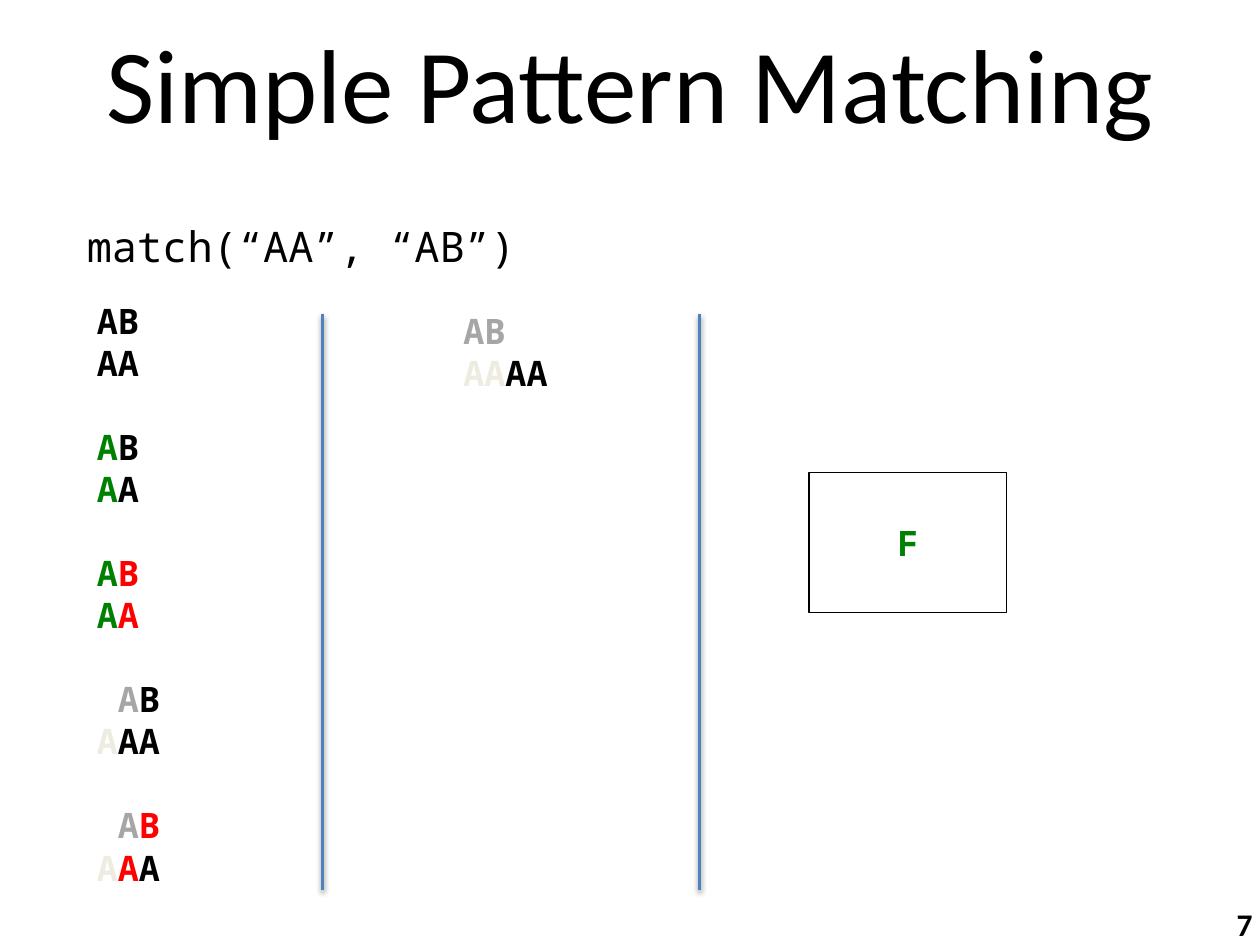
from lxml import etree
from pptx import Presentation
from pptx.dml.color import RGBColor
from pptx.enum.shapes import MSO_CONNECTOR, MSO_SHAPE
from pptx.enum.text import MSO_ANCHOR, PP_ALIGN
from pptx.oxml.ns import qn
from pptx.util import Inches, Pt

STRAIGHT, RECTANGLE = MSO_CONNECTOR.STRAIGHT, MSO_SHAPE.RECTANGLE
TOP, MIDDLE = MSO_ANCHOR.TOP, MSO_ANCHOR.MIDDLE
LEFT, CENTER, RIGHT = PP_ALIGN.LEFT, PP_ALIGN.CENTER, PP_ALIGN.RIGHT

THEME = {
    "colors": {
        "plain": "000000", "match": "008000", "mismatch": "FF0000",
        "skipped": "A6A6A6", "faded": "EEECE1", "divider": "4F81BD",
        "paper": "FFFFFF",
    },
    "fonts": {
        "title": {"name": "Calibri", "size": Pt(60), "bold": False},
        "call": {"name": "Noto Sans Mono", "size": Pt(24), "bold": False},
        "trace": {"name": "Noto Sans Mono", "size": Pt(20), "bold": True},
        "page": {"name": "Calibri", "size": Pt(18), "bold": True},
    },
}


def color(role):
    return RGBColor.from_string(THEME["colors"][role])


def write(frame, font, lines, anchor=TOP, align=LEFT, spacing=None, step_gap=None):
    frame.word_wrap = True
    frame.vertical_anchor = anchor
    for number, line in enumerate(lines):
        paragraph = frame.paragraphs[0] if number == 0 else frame.add_paragraph()
        paragraph.alignment = align
        paragraph.line_spacing = spacing
        if step_gap and number and number % 2 == 0:
            paragraph.space_before = step_gap
        for text, role in line:
            run = paragraph.add_run()
            run.text = text
            for name, value in THEME["fonts"][font].items():
                setattr(run.font, name, value)
            run.font.color.rgb = color(role)


presentation = Presentation()
presentation.slide_width, presentation.slide_height = Inches(10), Inches(7.5)
slide = presentation.slides.add_slide(presentation.slide_layouts[6])

trace_steps = [
    [("AB", "plain")],
    [("AA", "plain")],
    [("A", "match"), ("B", "plain")],
    [("A", "match"), ("A", "plain")],
    [("A", "match"), ("B", "mismatch")],
    [("A", "match"), ("A", "mismatch")],
    [(" ", "skipped"), ("A", "skipped"), ("B", "plain")],
    [("A", "faded"), ("AA", "plain")],
    [(" ", "skipped"), ("A", "skipped"), ("B", "mismatch")],
    [("A", "faded"), ("A", "mismatch"), ("A", "plain")],
]
final_shift = [
    [("AB", "skipped")],
    [("AA", "faded"), ("AA", "plain")],
]

texts = [
    ((0.5, -0.03, 9, 1.57), "title", [[("Simple Pattern Matching", "plain")]],
     {"anchor": MIDDLE, "align": CENTER, "spacing": 0.75}),
    ((0.59, 1.7, 8.98, 0.5), "call", [[("match(“AA”, “AB”)", "plain")]], {}),
    ((0.67, 2.33, 1.57, 4.81), "trace", trace_steps, {"step_gap": Pt(24)}),
    ((3.58, 2.41, 1.57, 1.45), "trace", final_shift, {}),
    ((7.71, 7.13, 2.33, 0.4), "page", [[("7", "plain")]],
     {"anchor": MIDDLE, "align": RIGHT}),
]
for place, font, lines, layout in texts:
    box = slide.shapes.add_textbox(*map(Inches, place))
    write(box.text_frame, font, lines, **layout)

result = slide.shapes.add_shape(RECTANGLE, *map(Inches, (6.42, 3.75, 1.57, 1.11)))
result.shadow.inherit = False
result.fill.solid()
result.fill.fore_color.rgb = color("paper")
result.line.color.rgb = color("plain")
result.line.width = Pt(0.75)
write(result.text_frame, "trace", [[("F", "match")]], MIDDLE, CENTER)

for x in (2.56, 5.55):
    divider = slide.shapes.add_connector(STRAIGHT, *map(Inches, (x, 2.49, x, 7.06)))
    divider.line.color.rgb = color("divider")
    divider.line.width = Pt(2)
    effects = etree.SubElement(divider._element.spPr, qn("a:effectLst"))
    shadow = etree.SubElement(
        effects, qn("a:outerShdw"), blurRad=str(Pt(3.1)), dist=str(Pt(1.6)),
        dir="5400000", rotWithShape="0")
    shade = etree.SubElement(shadow, qn("a:srgbClr"), val=THEME["colors"]["plain"])
    etree.SubElement(shade, qn("a:alpha"), val="38000")

presentation.save("out.pptx")
